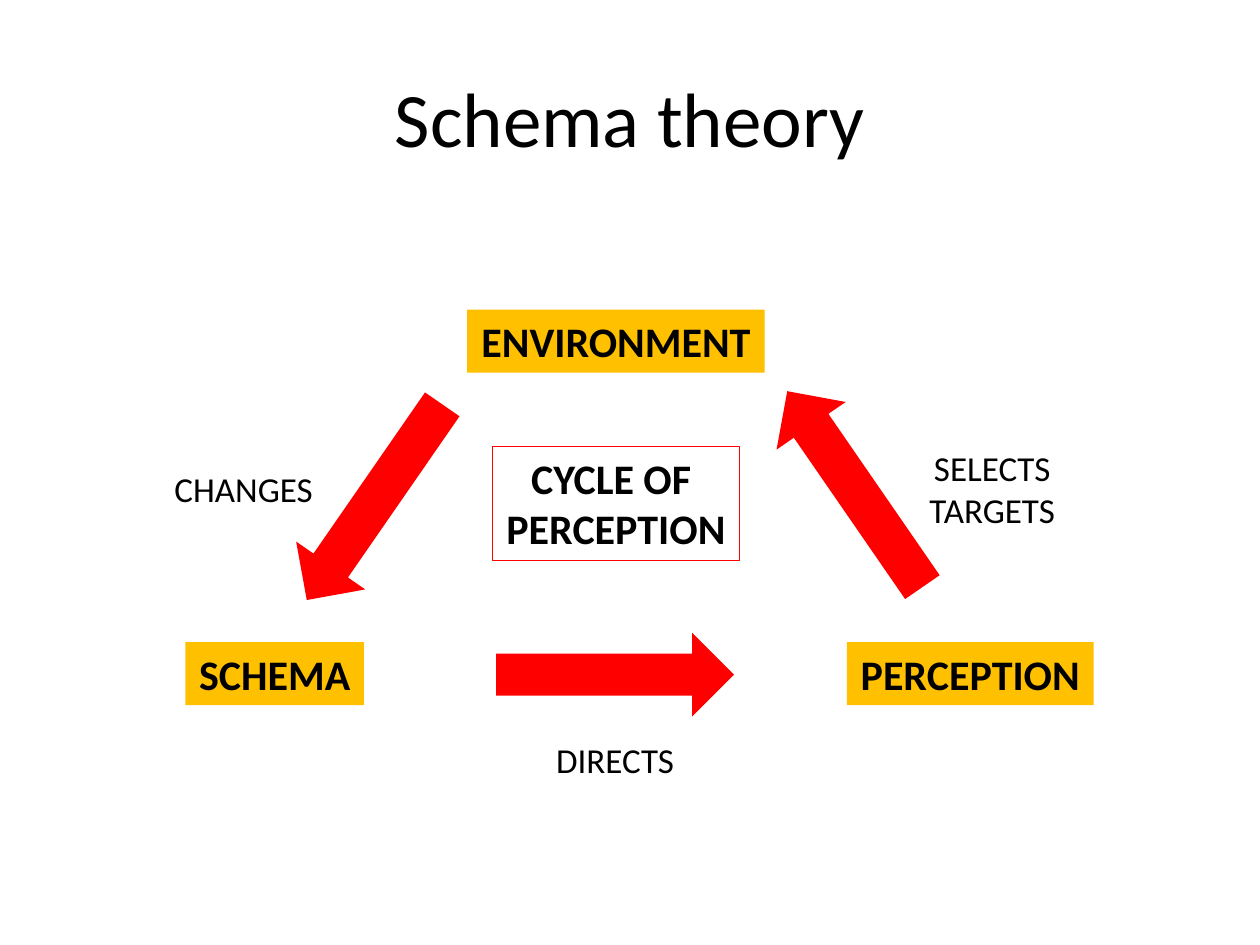
from pptx import Presentation
from pptx.dml.color import RGBColor
from pptx.enum.shapes import MSO_SHAPE
from pptx.enum.text import MSO_ANCHOR, MSO_AUTO_SIZE, PP_ALIGN
from pptx.util import Pt

RIGHT_ARROW = MSO_SHAPE.RIGHT_ARROW
RECTANGLE = MSO_SHAPE.RECTANGLE
CENTER = PP_ALIGN.CENTER
MIDDLE, TOP = MSO_ANCHOR.MIDDLE, MSO_ANCHOR.TOP
FIT_SHAPE, FIXED = MSO_AUTO_SIZE.SHAPE_TO_FIT_TEXT, MSO_AUTO_SIZE.NONE

BLACK, AMBER, RED = "000000", "FFC000", "FF0000"
ARROW_SIZE = (136, 48)

# Text, box (left, top, width, height)
STAGES = [
    ("SCHEMA", (106, 367, 102, 36)),
    ("ENVIRONMENT", (267, 177, 170, 36)),
    ("PERCEPTION", (484, 367, 141, 36)),
]
# Label, label box, arrow position, arrow rotation
STEPS = [
    ("DIRECTS", (310, 418.3, 83, 31.5), (283.5, 361.5), 0),
    ("SELECTS\nTARGETS", (523.5, 251.5, 87, 55.5), (420.5, 255.5), 235.4),
    ("CHANGES", (92, 263.5, 94.5, 31.5), (146, 263), 124.7),
]
CENTRE_TEXT = "CYCLE OF \vPERCEPTION"
CENTRE_BOX = (281.5, 255, 141, 65.5)


def color(hex_value):
    return RGBColor.from_string(hex_value)


def points(box):
    return [Pt(length) for length in box]


def write_text(frame, text, size, bold=False, **frame_format):
    frame.text = text
    for name, value in frame_format.items():
        setattr(frame, name, value)
    font_format = {"name": "Calibri", "size": Pt(size), "bold": bold}
    for paragraph in frame.paragraphs:
        paragraph.alignment = CENTER
        for run in paragraph.runs:
            for name, value in font_format.items():
                setattr(run.font, name, value)
            run.font.color.rgb = color(BLACK)


def add_title(slide, text, box):
    title = slide.shapes.title
    title.left, title.top, title.width, title.height = points(box)
    write_text(title.text_frame, text, 44, vertical_anchor=MIDDLE,
               word_wrap=True, auto_size=FIXED)


def add_filled_shape(slide, preset, box, fill=None, line=None):
    shape = slide.shapes.add_shape(preset, *points(box))
    shape.shadow.inherit = False
    if fill:
        shape.fill.solid()
        shape.fill.fore_color.rgb = color(fill)
    else:
        shape.fill.background()
    if line:
        shape.line.color.rgb = color(line)
        shape.line.width = Pt(0.75)
    else:
        shape.line.fill.background()
    return shape


def add_heading_box(slide, text, box, **paint):
    heading = add_filled_shape(slide, RECTANGLE, box, **paint)
    write_text(heading.text_frame, text, 24, bold=True, vertical_anchor=TOP,
               word_wrap=False, auto_size=FIT_SHAPE)


def add_step(slide, label, label_box, arrow_position, rotation):
    arrow = add_filled_shape(slide, RIGHT_ARROW, arrow_position + ARROW_SIZE, fill=RED)
    arrow.rotation = rotation
    caption = slide.shapes.add_textbox(*points(label_box))
    write_text(caption.text_frame, label, 20, vertical_anchor=TOP,
               word_wrap=False, auto_size=FIT_SHAPE)


def main():
    deck = Presentation()
    deck.slide_width, deck.slide_height = Pt(720), Pt(540)
    slide = deck.slides.add_slide(deck.slide_layouts[5])

    add_title(slide, "Schema theory", (36, 21.6, 648, 90))

    # Stages of the cycle
    for text, box in STAGES:
        add_heading_box(slide, text, box, fill=AMBER)

    # Arrows between the stages, with their labels
    for step in STEPS:
        add_step(slide, *step)

    # Name of the cycle
    add_heading_box(slide, CENTRE_TEXT, CENTRE_BOX, line=RED)

    deck.save("out.pptx")


if __name__ == "__main__":
    main()
